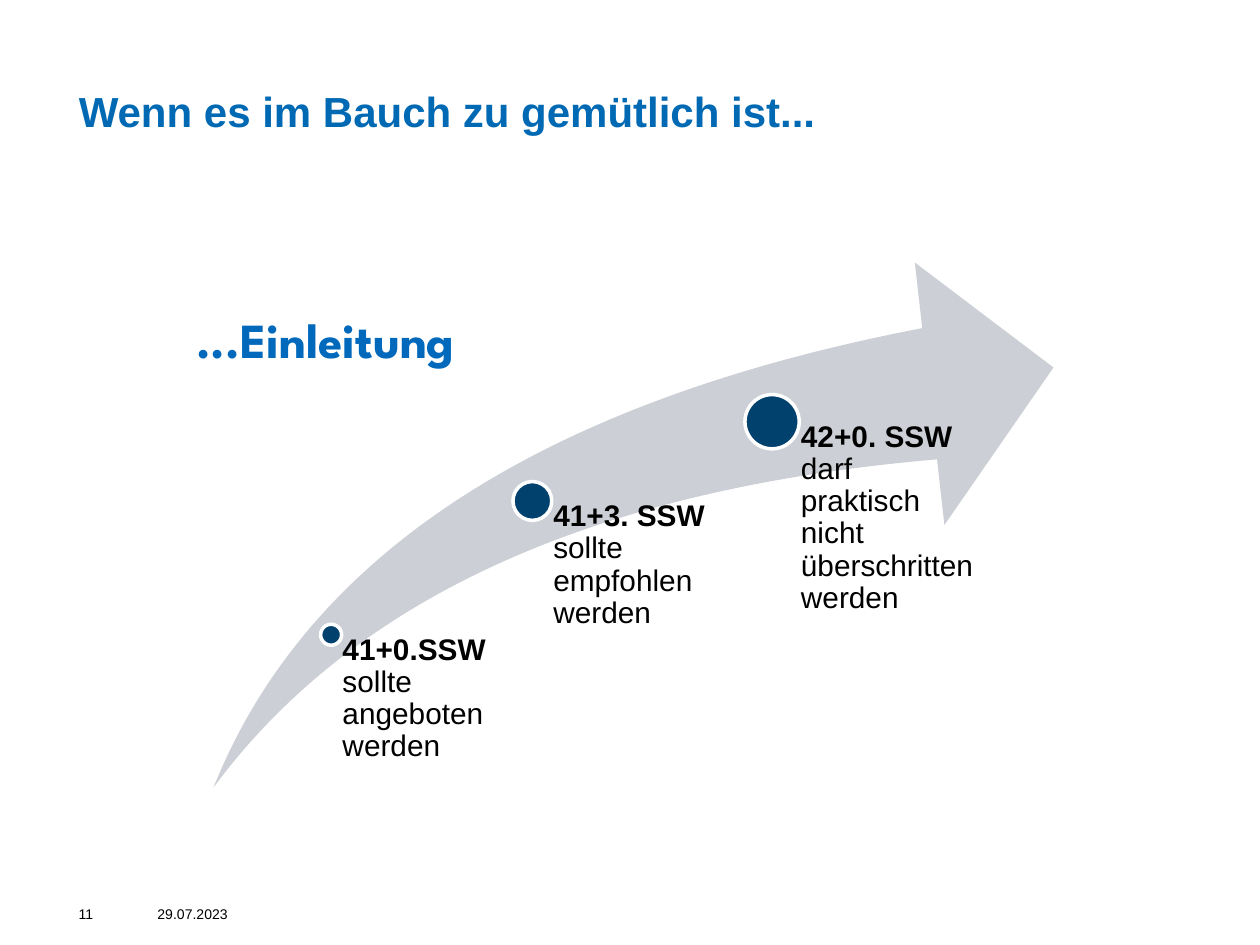
from pptx import Presentation
from pptx.dml.color import RGBColor
from pptx.enum import shapes, text
from pptx.util import Pt

TITLE = RGBColor(0x00, 0x69, 0xB4)
ACCENT = RGBColor(0x00, 0x69, 0xBC)
NAVY = RGBColor(0x00, 0x41, 0x6E)
GREY = RGBColor(0xCC, 0xCF, 0xD5)
BLACK = RGBColor(0, 0, 0)
WHITE = RGBColor(255, 255, 255)

BASE = 450  # lower edge of the arrow and of all step labels

# Dot centre x, y, diameter; label inset and width; heading and advice
STEPS = [
    (189.2, 362.7, 12, 6.5, 111.6, "41+0.SSW ", "sollte angeboten werden"),
    (304.2, 286.3, 22.2, 12, 115.2, "41+3. SSW ", "sollte empfohlen werden"),
    (441.2, 241, 31, 16.5, 115.2, "42+0. SSW ",
     "darf praktisch nicht überschritten werden"),
]


def add_run(par, words, size, color=BLACK, bold=False, face="Arial"):
    run = par.add_run()
    run.text = words
    form = {"name": face, "size": Pt(size), "bold": bold}
    for key, value in form.items():
        setattr(run.font, key, value)
    run.font.color.rgb = color


def set_frame(frame, left=0, top=0, right=0, bottom=0,
              anchor=text.MSO_ANCHOR.TOP):
    form = {
        "margin_left": Pt(left), "margin_top": Pt(top),
        "margin_right": Pt(right), "margin_bottom": Pt(bottom),
        "word_wrap": True, "auto_size": text.MSO_AUTO_SIZE.NONE,
        "vertical_anchor": anchor,
    }
    for key, value in form.items():
        setattr(frame, key, value)


def add_box(slide, box, **pads):
    frame = slide.shapes.add_textbox(*map(Pt, box)).text_frame
    set_frame(frame, **pads)
    return frame


def add_form(slide, kind, box, color):
    form = slide.shapes.add_shape(kind, *map(Pt, box))
    form.shadow.inherit = False
    form.fill.solid()
    form.fill.fore_color.rgb = color
    form.line.fill.background()
    return form


def add_title(slide, words):
    title = slide.shapes.title
    box = {"left": 45, "top": 35.3, "width": 585, "height": 42.5}
    for key, value in box.items():
        setattr(title, key, Pt(value))
    set_frame(title.text_frame, anchor=text.MSO_ANCHOR.BOTTOM)
    par = title.text_frame.paragraphs[0]
    par.alignment = text.PP_ALIGN.LEFT
    add_run(par, words, 24, TITLE, True)


def add_step(slide, x, y, size, inset, width, head, advice):
    dot = add_form(slide, shapes.MSO_SHAPE.OVAL,
                   (x - size / 2, y - size / 2, size, size), NAVY)
    dot.line.color.rgb = WHITE
    dot.line.width = Pt(2)
    # The label starts at the centre of its dot
    par = add_box(slide, (x, y, width, BASE - y), left=inset).paragraphs[0]
    par.line_spacing = 0.9
    add_run(par, head, 17, bold=True)
    add_run(par, advice, 17)


def main():
    prs = Presentation()
    prs.slide_width, prs.slide_height = Pt(720), Pt(540)
    slide = prs.slides.add_slide(prs.slide_layouts[5])
    add_title(slide, "Wenn es im Bauch zu gemütlich ist...")

    # Footer: page number and date
    for left, width, words in ((45, 30, "11"), (90, 45, "29.07.2023")):
        frame = add_box(slide, (left, 517.5, width, 9))
        add_run(frame.paragraphs[0], words, 8)

    # Rising arrow with its three steps
    arrow = add_form(slide, shapes.MSO_SHAPE.SWOOSH_ARROW,
                     (122, 150, 480, BASE - 150), GREY)
    arrow.adjustments[0] = arrow.adjustments[1] = 0.25
    for step in STEPS:
        add_step(slide, *step)

    # Caption above the arrow
    frame = add_box(slide, (105, 173.5, 232.5, 41),
                    left=7.2, top=3.6, right=7.2, bottom=3.6)
    add_run(frame.paragraphs[0], "...Einleitung", 28, ACCENT, True,
            "League Spartan")

    prs.save("out.pptx")


if __name__ == "__main__":
    main()
